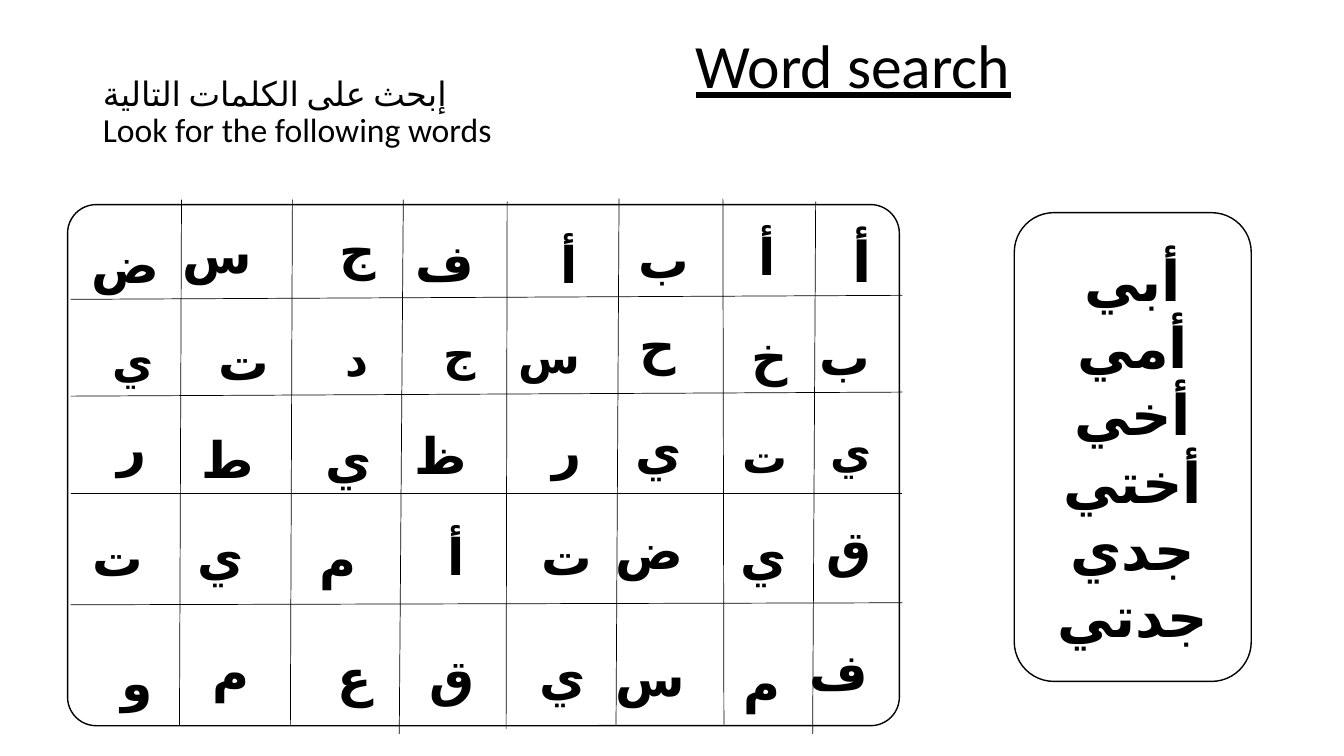
from dataclasses import dataclass

from lxml import etree
from pptx import Presentation
from pptx.dml.color import RGBColor
from pptx.enum.shapes import MSO_CONNECTOR, MSO_SHAPE
from pptx.enum.text import MSO_ANCHOR, MSO_AUTO_SIZE, PP_ALIGN
from pptx.oxml.ns import qn
from pptx.util import Inches, Pt


@dataclass(frozen=True)
class Theme:
    font: str = "Calibri"
    ink: RGBColor = RGBColor(0, 0, 0)
    paper: RGBColor = RGBColor(255, 255, 255)
    heading: int = 44
    words: int = 40
    instruction: int = 24
    outline: float = 1
    grid: float = 0.5


theme = Theme()


def style_paragraph(paragraph, size, align, rtl=False, bold=False):
    paragraph.alignment = align
    paragraph.font.name = theme.font
    paragraph.font.size = Pt(size)
    paragraph.font.bold = bold
    paragraph.font.color.rgb = theme.ink
    if rtl:
        # Arabic direction, language and complex-script font
        properties = paragraph._p.get_or_add_pPr()
        properties.set("rtl", "1")
        defaults = properties.find(qn("a:defRPr"))
        defaults.set("lang", "ar-SA")
        etree.SubElement(defaults, qn("a:cs")).set("typeface", theme.font)


def add_panel(left, top, width, height, corner):
    panel = slide.shapes.add_shape(
        MSO_SHAPE.ROUNDED_RECTANGLE,
        Inches(left), Inches(top), Inches(width), Inches(height))
    panel.adjustments[0] = corner
    panel.shadow.inherit = False
    panel.fill.solid()
    panel.fill.fore_color.rgb = theme.paper
    panel.line.color.rgb = theme.ink
    panel.line.width = Pt(theme.outline)
    return panel


presentation = Presentation()
presentation.slide_width = Inches(13.33)
presentation.slide_height = Inches(7.5)
slide = presentation.slides.add_slide(presentation.slide_layouts[5])

# Instruction in both languages
title = slide.shapes.title
title.left, title.top = Inches(0.92), Inches(0.4)
title.width, title.height = Inches(11.5), Inches(1.45)
title.text_frame.vertical_anchor = MSO_ANCHOR.MIDDLE
paragraph = title.text_frame.paragraphs[0]
paragraph.add_run().text = "إبحث على الكلمات التالية"
paragraph.add_line_break()
paragraph.add_run().text = "Look for the following words"
paragraph.line_spacing = 0.9
style_paragraph(paragraph, theme.instruction, PP_ALIGN.LEFT, rtl=True)

# Words to find
word_panel = add_panel(10.06, 2.11, 2.35, 4.65, 0.167)
frame = word_panel.text_frame
frame.vertical_anchor = MSO_ANCHOR.MIDDLE
frame.text = "\n".join(["أبي", "أمي", "أخي", "أختي", "جدي", "جدتي"])
for paragraph in frame.paragraphs:
    style_paragraph(paragraph, theme.words, PP_ALIGN.CENTER, rtl=True, bold=True)

# Hand-drawn letter grid: start x, start y, end x, end y
add_panel(0.67, 2.03, 8.25, 5.17, 0.055)
column_lines = [
    (1.8, 1.98, 1.78, 7.2), (2.9, 1.98, 2.88, 7.2), (4, 1.98, 3.96, 7.28),
    (5.03, 2, 5.02, 7.23), (6.14, 1.97, 6.11, 7.19), (7.17, 1.97, 7.18, 7.19),
    (8.09, 2, 8.06, 7.28),
]
row_lines = [(0.7, start, 8.95, end) for start, end in
             [(2.97, 2.93), (3.93, 3.89), (4.89, 4.89), (6, 5.98)]]
for ends in column_lines + row_lines:
    line = slide.shapes.add_connector(
        MSO_CONNECTOR.STRAIGHT, *[Inches(value) for value in ends])
    line.line.color.rgb = theme.ink
    line.line.width = Pt(theme.grid)
    etree.SubElement(line._element.spPr, qn("a:effectLst"))

# Letters by row, left to right: letter, left, top, width, size
letter_rows = [
    [("ض", 0.92, 2.26, 0.76, 36), ("س", 2.2, 2.16, 0.4, 36),
     ("ج", 3.19, 2.12, 0.64, 36), ("ف", 4.26, 2.24, 0.54, 36),
     ("أ", 5.38, 2.26, 0.45, 36), ("ب", 6.49, 2.21, 0.44, 36),
     ("أ", 7.24, 2.18, 0.55, 36), ("أ", 8.18, 2.2, 0.56, 40)],
    [("ي", 0.86, 3.26, 0.76, 32), ("ت", 2.13, 3.23, 0.64, 36),
     ("د", 3.27, 3.24, 0.48, 32), ("ج", 4.34, 3.18, 0.48, 32),
     ("س", 5.26, 3.21, 0.59, 32), ("ح", 6.36, 3.07, 0.44, 36),
     ("خ", 7.36, 3.18, 0.55, 36), ("ب", 8.17, 3.18, 0.56, 36)],
    [("ر", 1.03, 4.08, 0.52, 36), ("ط", 2.07, 4.2, 0.55, 36),
     ("ي", 3.14, 4.2, 0.64, 36), ("ظ", 4.25, 4.16, 0.48, 36),
     ("ر", 5.28, 4.11, 0.59, 36), ("ي", 6.27, 4.11, 0.59, 36),
     ("ت", 7.36, 4.2, 0.55, 32), ("ي", 8.33, 4.15, 0.41, 32)],
    [("ت", 1.08, 5.17, 0.44, 36), ("ي", 2.2, 5.16, 0.32, 36),
     ("م", 3.11, 5.19, 0.52, 36), ("أ", 4.23, 5.16, 0.48, 36),
     ("ت", 5.38, 5.16, 0.59, 36), ("ض", 6.41, 5.1, 0.47, 36),
     ("ي", 7.48, 5.16, 0.42, 36), ("ق", 8.33, 5.08, 0.41, 36)],
    [("و", 1.08, 6.41, 0.53, 36), ("م", 2.17, 6.31, 0.4, 36),
     ("ع", 3.27, 6.36, 0.52, 36), ("ق", 4.33, 6.36, 0.48, 36),
     ("ي", 5.32, 6.35, 0.59, 36), ("س", 6.39, 6.36, 0.5, 36),
     ("م", 7.38, 6.42, 0.46, 36), ("ف", 8.29, 6.3, 0.42, 36)],
]
letter_heights = {32: 0.64, 36: 0.71, 40: 0.77}
for row in letter_rows:
    for letter, left, top, width, size in row:
        box = slide.shapes.add_textbox(
            Inches(left), Inches(top), Inches(width), Inches(letter_heights[size]))
        box.text_frame.word_wrap = True
        box.text_frame.auto_size = MSO_AUTO_SIZE.SHAPE_TO_FIT_TEXT
        box.text_frame.text = letter
        style_paragraph(box.text_frame.paragraphs[0], size, PP_ALIGN.RIGHT,
                        rtl=True, bold=True)

# Heading
heading = slide.shapes.add_textbox(Inches(6.8), Inches(0.22), Inches(4.28), Inches(1.14))
heading.text_frame.word_wrap = True
heading.text_frame.text = "Word search"
paragraph = heading.text_frame.paragraphs[0]
style_paragraph(paragraph, theme.heading, PP_ALIGN.LEFT)
paragraph.font.underline = True

presentation.save("out.pptx")
